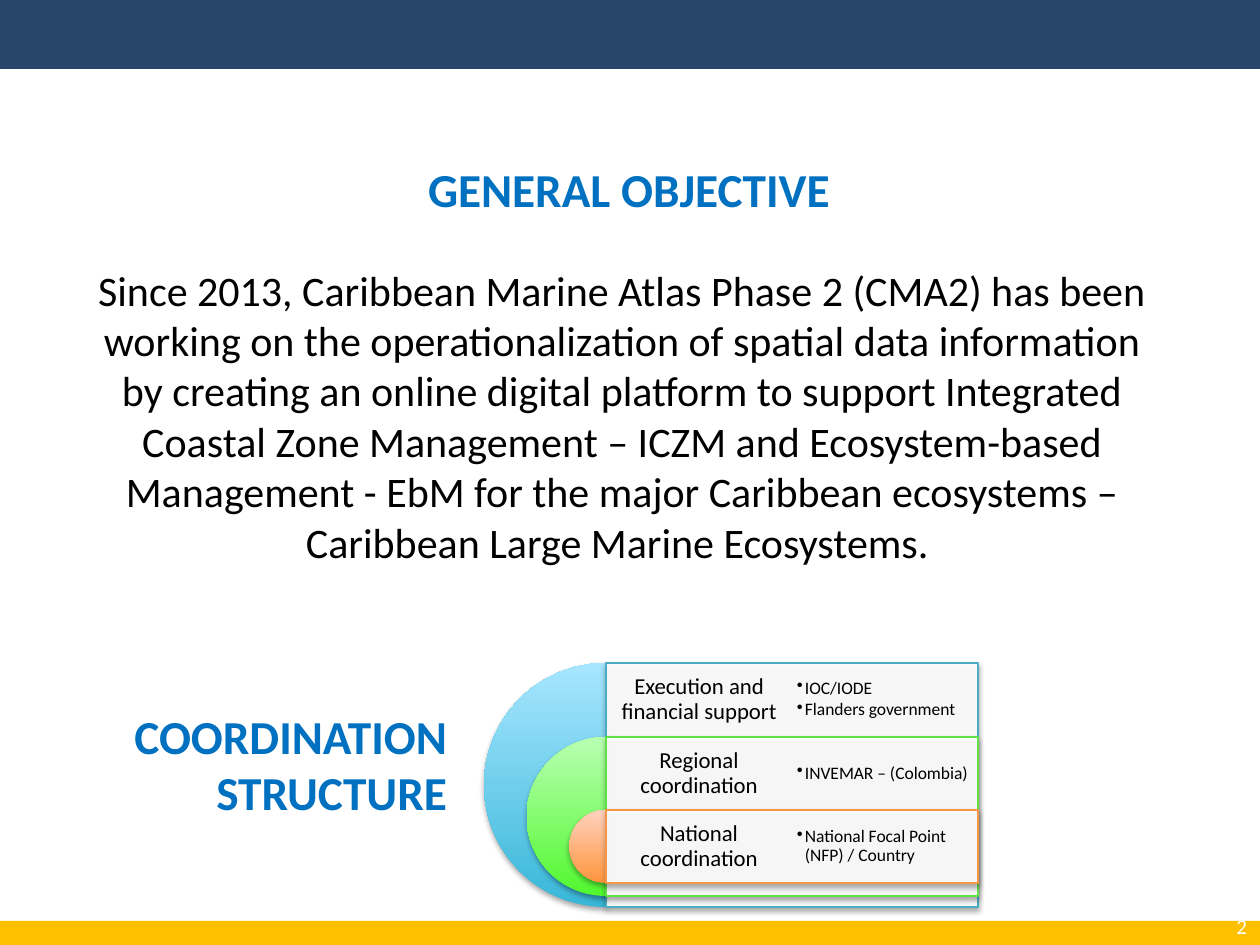
from lxml import etree
from pptx import Presentation
from pptx import util as u
from pptx.dml.color import RGBColor
from pptx.enum import shapes, text
from pptx.oxml.ns import qn

SCALE = 914400 / 126  # EMU per px
COLOURS = {
    "navy": "28466A", "gold": "FFC000", "heading": "0070C0",
    "black": "000000", "white": "FFFFFF",
}
CENTRE, RIGHT = text.PP_ALIGN.CENTER, text.PP_ALIGN.RIGHT
TOP, MIDDLE = text.MSO_ANCHOR.TOP, text.MSO_ANCHOR.MIDDLE
HEADING = {"size": u.Pt(27), "bold": True}

# Rings from outer to inner: top, diameter, line, gradient, label, details
AXIS, CARD_WIDTH, COLUMN, ROW = 606, 372, 186, 73
RINGS = [
    (663, 244, "4BACC6", ("39B7D8", "A7E6FF"),
     "Execution and financial support", ["IOC/IODE", "Flanders government"]),
    (737, 159, "60E146", ("51F82F", "B9FFB2"),
     "Regional coordination", ["INVEMAR – (Colombia)"]),
    (810, 73, "F79646", ("FF953E", "FFD2BD"),
     "National coordination", ["National Focal Point (NFP) / Country"]),
]


def px(length):
    return u.Emu(round(length * SCALE))


def rgb(value):
    return RGBColor.from_string(value)


def set_all(target, values):
    for name, value in values.items():
        setattr(target, name, value)


def place(box, left, top, width, height):
    set_all(box, {"left": px(left), "top": px(top),
                  "width": px(width), "height": px(height)})


def write(box, lines, colour, font, para_format=None, anchor=TOP,
          insets=(13, 6), indent=(0, 0), bullet=None):
    """Fill a box with paragraphs that share one format."""
    side, edge = map(px, insets)
    frame = box.text_frame
    set_all(frame, {"word_wrap": True, "auto_size": text.MSO_AUTO_SIZE.NONE,
                    "vertical_anchor": anchor,
                    "margin_left": side, "margin_right": side,
                    "margin_top": edge, "margin_bottom": edge})
    for index, line in enumerate(lines):
        para = frame.add_paragraph() if index else frame.paragraphs[0]
        props = para._p.get_or_add_pPr()
        props.set("marL", str(px(indent[0])))
        props.set("indent", str(px(indent[1])))
        if bullet:
            etree.SubElement(props, qn("a:buChar"), char=bullet)
        else:
            etree.SubElement(props, qn("a:buNone"))
        set_all(para, {"space_before": u.Pt(0), **(para_format or {})})
        span = para.add_run()
        span.text = line
        set_all(span.font, {"name": "Calibri", **font})
        span.font.color.rgb = rgb(colour)


def add_text(parent, area, lines, colour, font, **options):
    box = parent.add_textbox(*map(px, area))
    write(box, lines, colour, font, **options)


def add_bar(page, top, height, colour):
    bar = page.shapes.add_shape(shapes.MSO_SHAPE.RECTANGLE,
                                *map(px, (0, top, 1260, height)))
    bar.shadow.inherit = False
    bar.fill.solid()
    bar.fill.fore_color.rgb = rgb(colour)
    bar.line.fill.background()


def add_shadow(shape):
    shape.shadow.inherit = False
    effects = shape._element.spPr.find(qn("a:effectLst"))
    shadow = etree.SubElement(effects, qn("a:outerShdw"), blurRad="40000",
                              dist="23000", dir="5400000", rotWithShape="0")
    tone = etree.SubElement(shadow, qn("a:srgbClr"), val=COLOURS["black"])
    etree.SubElement(tone, qn("a:alpha"), val="35000")


def add_half_disc(parent, top, diameter, gradient):
    disc = parent.add_shape(shapes.MSO_SHAPE.PIE, px(AXIS - diameter / 2),
                            px(top), px(diameter), px(diameter))
    disc.adjustments[0], disc.adjustments[1] = 54, 162
    disc.fill.gradient()
    disc.fill.gradient_angle = 90
    for stop, colour, position in zip(disc.fill.gradient_stops, gradient, (0, 1)):
        stop.color.rgb = rgb(colour)
        stop.position = position
    disc.line.fill.background()
    add_shadow(disc)


def add_card(parent, top, height, line):
    card = parent.add_shape(shapes.MSO_SHAPE.RECTANGLE,
                            *map(px, (AXIS, top, CARD_WIDTH, height)))
    card.fill.solid()
    card.fill.fore_color.rgb = rgb(COLOURS["white"])
    tone = card._element.spPr.find(qn("a:solidFill"))[0]
    etree.SubElement(tone, qn("a:alpha"), val="90000")
    card.line.color.rgb = rgb(line)
    card.line.width = u.Pt(0.75)
    add_shadow(card)


def add_structure(page):
    parent = page.shapes.add_group_shape().shapes
    for top, diameter, line, gradient, label, details in RINGS:
        add_half_disc(parent, top, diameter, gradient)
        add_card(parent, top, diameter, line)
        add_text(parent, (AXIS, top, COLUMN, ROW), [label], COLOURS["black"],
                 {"size": u.Pt(13)}, anchor=MIDDLE, insets=(6, 6),
                 para_format={"alignment": CENTRE, "line_spacing": 0.9,
                              "space_after": u.Pt(4.5)})
        add_text(parent, (AXIS + COLUMN, top, COLUMN, ROW), details,
                 COLOURS["black"], {"size": u.Pt(10)}, anchor=MIDDLE,
                 insets=(5, 5), indent=(8, -8), bullet="•",
                 para_format={"line_spacing": 0.9, "space_after": u.Pt(1.5)})


def main():
    deck = Presentation()
    deck.slide_width, deck.slide_height = px(1260), px(945)
    page = deck.slides.add_slide(deck.slide_layouts[1])
    title, body = page.placeholders

    # Page frame and number
    add_bar(page, 0, 69, COLOURS["navy"])
    add_bar(page, 921, 24, COLOURS["gold"])
    add_text(page.shapes, (1196, 907, 64, 38), ["2"], COLOURS["white"],
             {"size": u.Pt(12)}, para_format={"alignment": RIGHT}, anchor=MIDDLE)

    # Objective
    place(title, 415, 154, 634, 77)
    write(title, ["GENERAL OBJECTIVE"], COLOURS["heading"], HEADING,
          para_format={"alignment": text.PP_ALIGN.LEFT})
    place(body, 79, 260, 1081, 381)
    write(body, ["Since 2013, Caribbean Marine Atlas Phase 2 (CMA2) has been "
                 "working on the operationalization of spatial data information "
                 "by creating an online digital platform to support Integrated "
                 "Coastal Zone Management – ICZM and Ecosystem-based Management "
                 "- EbM for the major Caribbean ecosystems – Caribbean Large "
                 "Marine Ecosystems. "],
          COLOURS["black"], {"size": u.Pt(24)}, insets=(9, 4), indent=(5, 0),
          para_format={"alignment": CENTRE})

    # Coordination structure
    add_structure(page)
    add_text(page.shapes, (79, 702, 377, 166), ["COORDINATION STRUCTURE"],
             COLOURS["heading"], HEADING, insets=(9, 5),
             para_format={"alignment": RIGHT})

    deck.save("out.pptx")


if __name__ == "__main__":
    main()
